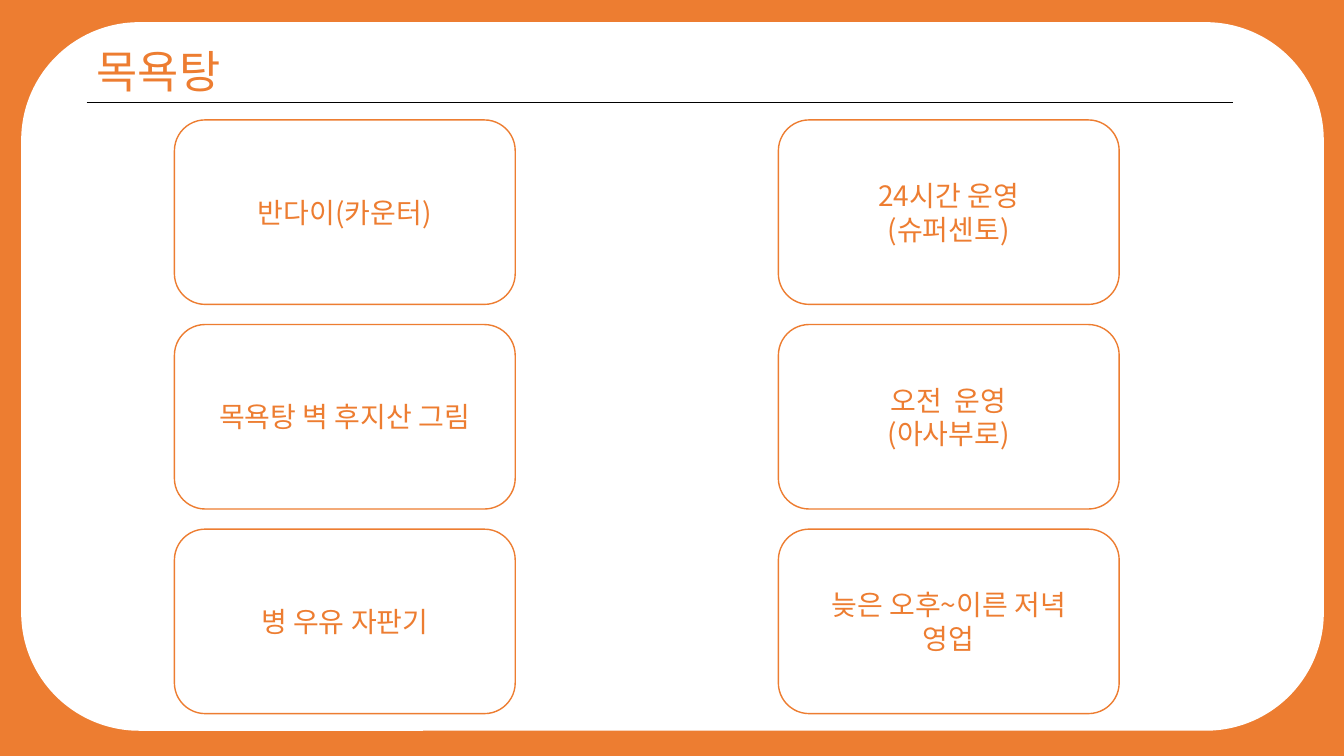
from lxml.etree import SubElement
from pptx import Presentation
from pptx.dml.color import RGBColor
from pptx.enum.shapes import MSO_CONNECTOR, MSO_SHAPE
from pptx.enum.text import MSO_ANCHOR, MSO_AUTO_SIZE, PP_ALIGN
from pptx.oxml.ns import qn
from pptx.util import Inches, Pt

ORANGE = RGBColor(0xED, 0x7D, 0x31)
WHITE = RGBColor(0xFF, 0xFF, 0xFF)
BLACK = RGBColor(0x00, 0x00, 0x00)
FONT = "Noto Sans CJK KR"

COLUMNS = [
    (1.73, ["반다이(카운터)", "목욕탕 벽 후지산 그림", "병 우유 자판기"]),
    (7.72, ["24시간 운영\n(슈퍼센토)", "오전  운영\n(아사부로)", "늦은 오후~이른 저녁\n영업"]),
]
CARD_TOP, CARD_PITCH = 1.19, 2.03
CARD_WIDTH, CARD_HEIGHT = 3.38, 1.83


def write_text(tf, text, size, align):
    tf.word_wrap = True
    tf.text = text
    for p in tf.paragraphs:
        p.alignment = align
        p.font.size = Pt(size)
        p.font.name = FONT
        p.font.color.rgb = ORANGE
        SubElement(p._p.pPr.find(qn("a:defRPr")), qn("a:ea"), typeface=FONT)


def add_panel(s, left, top, width, height):
    sp = s.shapes.add_shape(MSO_SHAPE.ROUNDED_RECTANGLE, Inches(left), Inches(top),
                            Inches(width), Inches(height))
    sp.shadow.inherit = False
    sp.fill.solid()
    sp.fill.fore_color.rgb = WHITE
    sp.line.fill.background()
    return sp


def add_card(s, left, top, text):
    sp = add_panel(s, left, top, CARD_WIDTH, CARD_HEIGHT)
    sp.line.color.rgb = ORANGE
    sp.line.width = Pt(1)
    sp.text_frame.vertical_anchor = MSO_ANCHOR.MIDDLE
    write_text(sp.text_frame, text, 20, PP_ALIGN.CENTER)


def add_title(s, text):
    tf = s.shapes.add_textbox(Inches(0.86), Inches(0.38), Inches(3.54), Inches(0.64)).text_frame
    write_text(tf, text, 32, PP_ALIGN.LEFT)
    tf.auto_size = MSO_AUTO_SIZE.SHAPE_TO_FIT_TEXT


def add_rule(s, left, right, y):
    line = s.shapes.add_connector(MSO_CONNECTOR.STRAIGHT, Inches(left), Inches(y),
                                  Inches(right), Inches(y))
    line.line.color.rgb = BLACK
    line.line.width = Pt(0.5)
    SubElement(line._element.spPr, qn("a:effectLst"))


def main():
    prs = Presentation()
    prs.slide_width, prs.slide_height = Inches(13.33), Inches(7.5)
    s = prs.slides.add_slide(prs.slide_layouts[6])
    s.background.fill.solid()
    s.background.fill.fore_color.rgb = ORANGE
    add_panel(s, 0.21, 0.22, 12.92, 7.03)
    add_rule(s, 0.86, 12.23, 1.02)
    add_title(s, "목욕탕")
    for left, texts in COLUMNS:
        for row, text in enumerate(texts):
            add_card(s, left, CARD_TOP + row * CARD_PITCH, text)
    prs.save("out.pptx")


if __name__ == "__main__":
    main()
